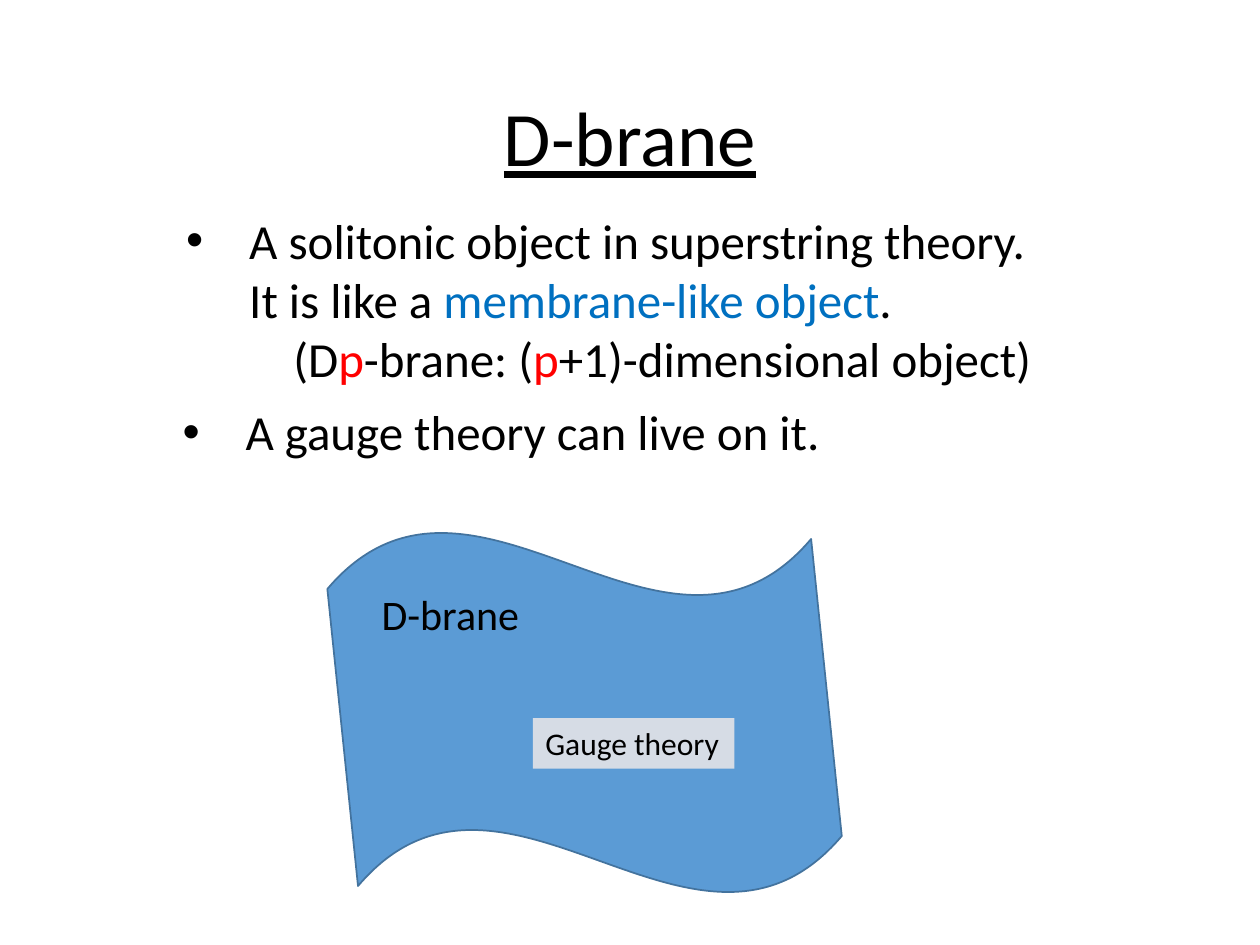
from dataclasses import dataclass
from typing import Optional

import pptx
import pptx.dml.color
import pptx.enum.shapes
import pptx.enum.text
import pptx.oxml
import pptx.oxml.ns
import pptx.util

Inches = pptx.util.Inches
Pt = pptx.util.Pt
Kind = pptx.enum.shapes.MSO_SHAPE
Align = pptx.enum.text.PP_ALIGN
Anchor = pptx.enum.text.MSO_ANCHOR
Fit = pptx.enum.text.MSO_AUTO_SIZE


@dataclass(frozen=True)
class Theme:
    font: str = "Calibri"
    ink: str = "000000"
    blue: str = "0070C0"
    red: str = "FF0000"
    brane: str = "5B9BD5"
    edge: str = "43739E"
    pale: str = "D6DCE5"
    title: int = 44
    body: int = 28
    label: int = 24
    small: int = 18


THEME = Theme()


@dataclass(frozen=True)
class Span:
    text: str
    color: str = THEME.ink


@dataclass(frozen=True)
class Line:
    spans: tuple[Span, ...]
    bullet: bool = False
    indent: float = 0


@dataclass(frozen=True)
class Box:
    at: tuple[float, float, float, float]
    lines: tuple[Line, ...]
    size: int
    fill: Optional[str] = None


def rgb(code: str) -> pptx.dml.color.RGBColor:
    return pptx.dml.color.RGBColor.from_string(code)


def set_indent(para, line: Line) -> None:
    props = para._p.get_or_add_pPr()
    props.set("marL", str(Inches(line.indent)))
    if line.bullet:
        props.set("indent", str(-Inches(line.indent)))
        space = pptx.oxml.ns.nsdecls("a")
        props.append(pptx.oxml.parse_xml(f'<a:buFont {space} typeface="Arial"/>'))
        props.append(pptx.oxml.parse_xml(f'<a:buChar {space} char="•"/>'))


def add_box(shapes, box: Box):
    shape = shapes.add_textbox(*map(Inches, box.at))
    if box.fill:
        shape.fill.solid()
        shape.fill.fore_color.rgb = rgb(box.fill)
    frame = shape.text_frame
    frame.word_wrap = False
    frame.auto_size = Fit.SHAPE_TO_FIT_TEXT
    for i, line in enumerate(box.lines):
        para = frame.add_paragraph() if i else frame.paragraphs[0]
        set_indent(para, line)
        for span in line.spans:
            run = para.add_run()
            run.text = span.text
            run.font.name = THEME.font
            run.font.size = Pt(box.size)
            run.font.color.rgb = rgb(span.color)
    return shape


def add_title(shapes, text: str) -> None:
    box = Box((0.69, 0.4, 8.62, 1.45), (Line((Span(text),)),), THEME.title)
    frame = add_box(shapes, box).text_frame
    frame.auto_size = Fit.NONE
    frame.word_wrap = True
    frame.vertical_anchor = Anchor.MIDDLE
    para = frame.paragraphs[0]
    para.alignment = Align.CENTER
    para.line_spacing = 0.9
    para.runs[0].font.underline = True


def add_wave(shapes) -> None:
    wave = shapes.add_shape(Kind.WAVE, *map(Inches, (2.71, 4.1, 3.86, 3.11)))
    wave.adjustments[0] = 0.119
    wave.adjustments[1] = 0
    wave.rotation = 354.1
    wave.shadow.inherit = False
    wave.fill.solid()
    wave.fill.fore_color.rgb = rgb(THEME.brane)
    wave.line.color.rgb = rgb(THEME.edge)
    wave.line.width = Pt(1)


# Bulleted statements
POINTS = (
    Box((1.35, 3.14, 5.31, 0.57),
        (Line((Span("A gauge theory can live on it."),), True, 0.5),),
        THEME.body),
    Box((1.38, 1.62, 7.03, 1.51), (
        Line((Span("A solitonic object in superstring theory."),), True, 0.5),
        Line((Span("It is like a "), Span("membrane-like object", THEME.blue),
              Span(".")), indent=0.5),
        Line((Span("(D"), Span("p", THEME.red), Span("-brane: ("),
              Span("p", THEME.red), Span("+1)-dimensional object)")),
             indent=0.85),
    ), THEME.body),
)

# Labels on the brane
LABELS = (
    Box((2.93, 4.62, 1.31, 0.5), (Line((Span("D-brane"),)),), THEME.label),
    Box((4.23, 5.7, 1.6, 0.4), (Line((Span("Gauge theory"),)),),
        THEME.small, THEME.pale),
)


def main() -> None:
    deck = pptx.Presentation()
    deck.slide_width, deck.slide_height = Inches(10), Inches(7.5)
    slide = deck.slides.add_slide(deck.slide_layouts[6])

    # Title and text
    add_title(slide.shapes, "D-brane")
    for box in POINTS:
        add_box(slide.shapes, box)

    # Brane sketch
    group = slide.shapes.add_group_shape()
    add_wave(group.shapes)
    for box in LABELS:
        add_box(group.shapes, box)

    deck.save("out.pptx")


if __name__ == "__main__":
    main()
